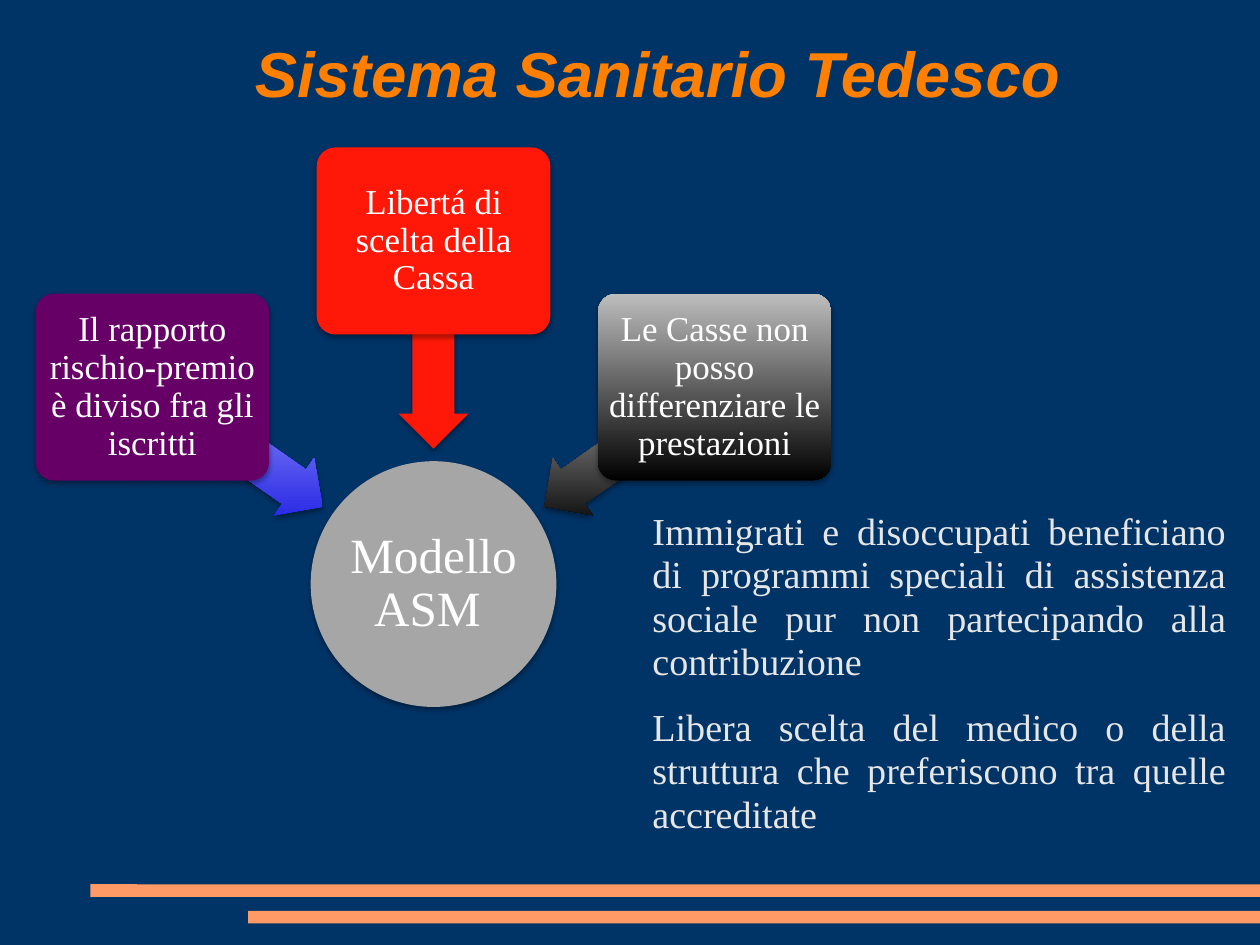
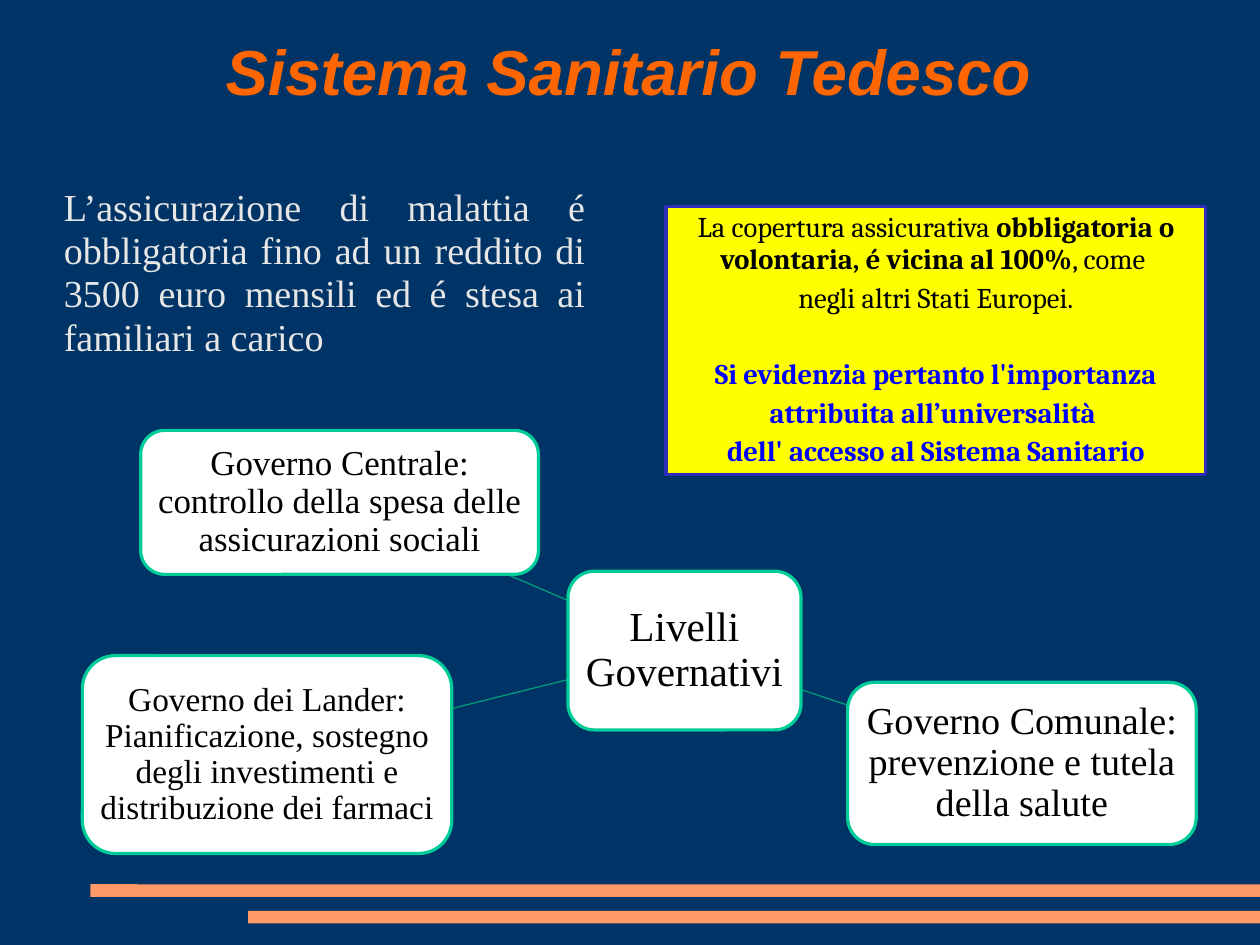
"""Build two slides on the German health system."""
import pptx
import pptx.dml.color
import pptx.enum.shapes
import pptx.enum.text
import pptx.oxml
import pptx.oxml.ns
import pptx.util

Pt = pptx.util.Pt
SHAPE = pptx.enum.shapes.MSO_SHAPE
ALIGN = pptx.enum.text.PP_ALIGN
ANCHOR = pptx.enum.text.MSO_ANCHOR
qn = pptx.oxml.ns.qn

WIDTH, HEIGHT = 793.75, 595.25
SERIF = "Times New Roman"
NAVY, PEACH, WHITE, BLACK = "003366", "FF9966", "FFFFFF", "000000"
RED, PURPLE, GREY, PALE = "FF1808", "660066", "A6A6A6", "E6E6E6"
YELLOW, BLUE, INDIGO = "FFFF00", "0000FF", "2D2DB9"
GREEN, DARK_GREEN = "00CC99", "00A37B"
BLUE_FADE, BLACK_FADE = ("1C1CE3", "A7A7FF"), ("000000", "BDBDBD")
SHADOW = (
    f'<a:effectLst {pptx.oxml.ns.nsdecls("a")}>'
    '<a:outerShdw blurRad="39370" dist="22860" dir="5400000" rotWithShape="0">'
    '<a:srgbClr val="000000"><a:alpha val="35000"/></a:srgbClr>'
    '</a:outerShdw></a:effectLst>'
)


def rgb(value):
    """Turn a hex string into a colour."""
    return pptx.dml.color.RGBColor.from_string(value)


def paint(sp, fill):
    """Fill with one colour, or fade up from the first colour of a pair."""
    if isinstance(fill, str):
        sp.fill.solid()
        sp.fill.fore_color.rgb = rgb(fill)
        return
    sp.fill.gradient()
    sp.fill.gradient_angle = 90
    for stop, color, position in zip(sp.fill.gradient_stops, fill, (0, 1)):
        stop.color.rgb = rgb(color)
        stop.position = position
    sp.element.spPr.find(qn("a:gradFill")).set("rotWithShape", "0")


def add_shape(slide, kind, box, fill, line=None, adj=(), shadow=False, rotation=0):
    """Add a preset shape with its fill, outline and optional soft shadow."""
    sp = slide.shapes.add_shape(kind, *map(Pt, box))
    sp.rotation = rotation
    for i, value in enumerate(adj):
        sp.adjustments[i] = value
    paint(sp, fill)
    if line:
        sp.line.color.rgb = rgb(line)
        sp.line.width = Pt(2)
    else:
        sp.line.fill.background()
    if shadow:
        sp.element.spPr.append(pptx.oxml.parse_xml(SHADOW))
    else:
        sp.shadow.inherit = False
    return sp


def frame(sp, insets, anchor=ANCHOR.MIDDLE):
    """Set up the text frame of a shape and return it."""
    tf = sp.text_frame
    tf.word_wrap = True
    tf.auto_size = pptx.enum.text.MSO_AUTO_SIZE.NONE
    tf.vertical_anchor = anchor
    tf.margin_left, tf.margin_top, tf.margin_right, tf.margin_bottom = map(Pt, insets)
    return tf


def add_text(tf, text, p=None, size=22, color=WHITE, font=SERIF, bold=False,
             italic=False, align=ALIGN.CENTER, spacing=0.9, before=0, after=0):
    """Write a run in a new paragraph, or at the end of paragraph p."""
    if p is None:
        p = tf.paragraphs[0] if not tf.paragraphs[0].runs else tf.add_paragraph()
        p.alignment = align
        p.line_spacing = spacing
        p.space_before, p.space_after = Pt(before), Pt(after)
    r = p.add_run()
    r.text = text
    r.font.name, r.font.size = font, Pt(size)
    r.font.bold, r.font.italic = bold, italic
    r.font.color.rgb = rgb(color)
    return p


def place(sp, box):
    """Move and size a placeholder."""
    sp.left, sp.top, sp.width, sp.height = map(Pt, box)


def add_slide(prs, title_box, title_color, title_align, body_box, body):
    """Add a slide with the title and justified body text."""
    slide = prs.slides.add_slide(prs.slide_layouts[1])
    place(slide.shapes.title, title_box)
    add_text(frame(slide.shapes.title, (0, 2.9, 0, 0)), "Sistema Sanitario Tedesco",
             size=40, color=title_color, font="Arial", bold=True, italic=True,
             align=title_align, spacing=0.93)
    sp = slide.placeholders[1]
    place(sp, body_box)
    tf = frame(sp, (0, 1.4, 0, 0), ANCHOR.TOP)
    for text in body:
        p = add_text(tf, text, size=24, color=PALE, align=ALIGN.JUSTIFY,
                     spacing=0.95, after=14.2)
        pPr = p._p.get_or_add_pPr()
        pPr.set("marL", str(Pt(8.5)))
        pPr.set("indent", "0")
        pPr.append(pptx.oxml.parse_xml(f'<a:buNone {pptx.oxml.ns.nsdecls("a")}/>'))
    return slide


def add_bands(prs, slide):
    """Draw the two footer bands and move them to the master."""
    for left, top in ((57, 557), (156.4, 573.7)):
        band = add_shape(slide, SHAPE.ROUNDED_RECTANGLE,
                         (left, top, WIDTH - left, 7.9), PEACH, adj=(0.017,))
        prs.slide_master.shapes.element.append(band.element)


def add_model(slide):
    """Draw three boxes whose arrows point at the model circle."""
    center_x, step, w, h = 273.1, 177.1, 147.2, 117.8
    circle = add_shape(slide, SHAPE.OVAL, (center_x - 77.4, 290.5, 154.8, 154.8),
                       GREY, shadow=True)
    add_text(frame(circle, [1.5] * 4), "Modello ASM ", size=31)
    causes = (
        (-1, 185, 281.6, 215, PURPLE, BLUE_FADE,
         "Il rapporto rischio-premio è diviso fra gli iscritti"),
        (0, 92.9, 217.1, 270, RED, RED, "Libertá di scelta della Cassa"),
        (1, 185, 281.6, 325, BLACK_FADE, BLACK_FADE,
         "Le Casse non posso differenziare le prestazioni"),
    )
    for side, top, arrow_y, rotation, fill, arrow_fill, text in causes:
        add_shape(slide, SHAPE.LEFT_ARROW,
                  (center_x + side * 123.5 - 65.5, arrow_y - 22, 131, 44),
                  arrow_fill, adj=(0.6, 0.5), shadow=True, rotation=rotation)
        box = add_shape(slide, SHAPE.ROUNDED_RECTANGLE,
                        (center_x + side * step - w / 2, top, w, h),
                        fill, adj=(0.1,), shadow=True)
        add_text(frame(box, [3.2] * 4), text)


def add_link(slide, start, end):
    """Draw a thin line between the centres of two boxes."""
    ends = [Pt(v) for x, y, w, h in (start, end) for v in (x + w / 2, y + h / 2)]
    line = slide.shapes.add_connector(pptx.enum.shapes.MSO_CONNECTOR.STRAIGHT, *ends)
    line.line.color.rgb = rgb(DARK_GREEN)
    line.line.width = Pt(0.75)
    line.element.spPr.append(pptx.oxml.parse_xml(
        f'<a:effectLst {pptx.oxml.ns.nsdecls("a")}/>'))


def add_levels(slide):
    """Draw the government levels around their hub."""
    levels = (
        ((357.8, 359.8, 146.9, 100), 26, "Livelli Governativi"),
        ((88.6, 271.1, 250.6, 90.7), 22,
         "Governo Centrale: controllo della spesa delle assicurazioni sociali"),
        ((534, 429.8, 219.6, 102.2), 24,
         "Governo Comunale: prevenzione e tutela della salute"),
        ((51.9, 413, 232.7, 124.6), 21,
         "Governo dei Lander: Pianificazione, sostegno degli investimenti "
         "e distribuzione dei farmaci"),
    )
    for box, _, _ in levels[1:]:
        add_link(slide, levels[0][0], box)
    for box, size, text in levels:
        sp = add_shape(slide, SHAPE.ROUNDED_RECTANGLE, box, WHITE, GREEN)
        add_text(frame(sp, [4.6] * 4), text, size=size, color=BLACK)


def add_coverage(slide):
    """Add the yellow note on insurance coverage."""
    sp = add_shape(slide, SHAPE.RECTANGLE, (419.6, 129.9, 340, 169.2), YELLOW, INDIGO)
    tf = frame(sp, (7.2, 3.6, 7.2, 3.6), ANCHOR.TOP)
    plain = dict(size=18, font="Cambria", color=BLACK)
    strong = dict(plain, color=BLUE, bold=True, spacing=1.12)
    p = add_text(tf, "La copertura assicurativa ", spacing=0.93, **plain)
    add_text(tf, "obbligatoria o volontaria, é vicina al 100%", p, bold=True, **plain)
    add_text(tf, ", come ", p, **plain)
    add_text(tf, "negli altri Stati Europei.", spacing=1.12, **plain)
    add_text(tf, "Si evidenzia pertanto l'importanza", before=24, **strong)
    add_text(tf, "attribuita all’universalità ", **strong)
    add_text(tf, "dell' accesso al Sistema Sanitario", **strong)


def main():
    """Build and save the presentation."""
    prs = pptx.Presentation()
    prs.slide_width, prs.slide_height = Pt(WIDTH), Pt(HEIGHT)
    paint(prs.slide_master.background, NAVY)

    slide = add_slide(
        prs, (160.5, -2.9, 531.4, 99.4), "FF8000", ALIGN.LEFT,
        (402.5, 320.2, 370, 230.4),
        ("Immigrati e disoccupati beneficiano di programmi speciali di assistenza "
         "sociale pur non partecipando alla contribuzione",
         "Libera scelta del medico o della struttura che preferiscono tra quelle "
         "accreditate"))
    add_bands(prs, slide)
    add_model(slide)

    slide = add_slide(
        prs, (56.9, 2.2, 677.5, 85.7), "FF6600", ALIGN.CENTER,
        (31.7, 116, 337, 108),
        ("L’assicurazione di malattia é obbligatoria fino ad un reddito di 3500 euro "
         "mensili ed é stesa ai familiari a carico",))
    add_levels(slide)
    add_coverage(slide)
    prs.save("out.pptx")


if __name__ == "__main__":
    main()
